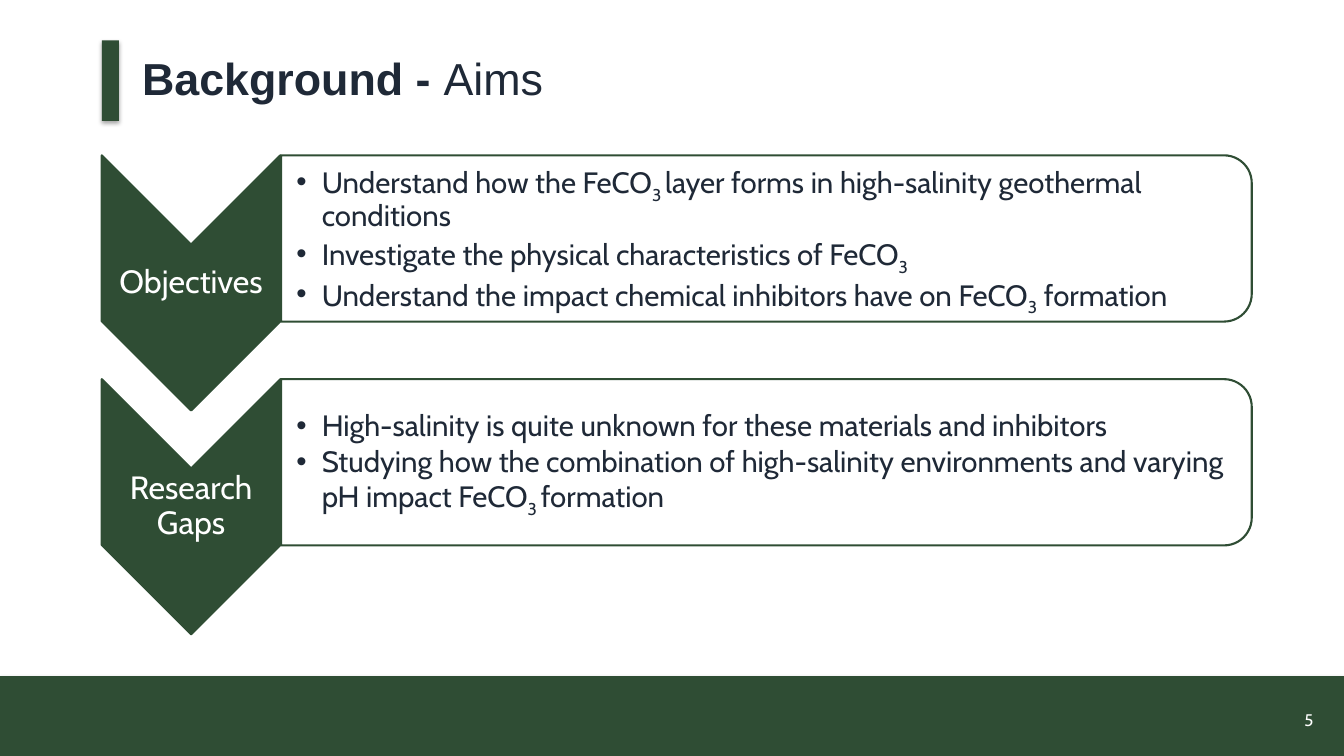
import pptx
import pptx.util
import pptx.dml.color
import pptx.enum.shapes
import pptx.enum.text
import pptx.oxml
import pptx.oxml.ns

Cm, Pt = pptx.util.Cm, pptx.util.Pt
RGB = pptx.dml.color.RGBColor.from_string
SHAPE = pptx.enum.shapes.MSO_SHAPE
ALIGN = pptx.enum.text.PP_ALIGN
NS = pptx.oxml.ns.nsdecls("a")
COLORS = {"green": "2F4D34", "ink": "1F2937", "white": "FFFFFF"}
SUB = {"baseline": "-25000"}


def write(sp, paragraphs, size, color, font="Cabin", align=ALIGN.LEFT,
          inset=(0.25, 0.13, 0.25, 0.13), spacing=None, after=0, bullet=False):
    """Each paragraph is a list of runs: a string, or (string, run attributes)."""
    tf = sp.text_frame
    tf.word_wrap = True
    tf.auto_size = pptx.enum.text.MSO_AUTO_SIZE.NONE
    tf.vertical_anchor = pptx.enum.text.MSO_ANCHOR.MIDDLE
    tf.margin_left, tf.margin_top, tf.margin_right, tf.margin_bottom = map(Cm, inset)
    for i, runs in enumerate(paragraphs):
        p = tf.add_paragraph() if i else tf.paragraphs[0]
        if bullet:
            pPr = p._p.get_or_add_pPr()
            pPr.set("marL", str(Cm(0.64)))
            pPr.set("indent", str(-Cm(0.64)))
            pPr.append(pptx.oxml.parse_xml(f'<a:buFont {NS} typeface="Arial"/>'))
            pPr.append(pptx.oxml.parse_xml(f'<a:buChar {NS} char="•"/>'))
        p.alignment = align
        p.space_after = Pt(after)
        if spacing:
            p.line_spacing = spacing
        for run in runs:
            text, attrs = (run, {}) if isinstance(run, str) else run
            r = p.add_run()
            r.text = text
            r.font.name, r.font.size = font, Pt(size)
            r.font.color.rgb = RGB(COLORS[color])
            for name, value in attrs.items():
                r._r.get_or_add_rPr().set(name, value)


def add_shape(kind, left, top, width, height, fill="green", line=None, rotation=0):
    sp = s.shapes.add_shape(kind, Cm(left), Cm(top), Cm(width), Cm(height))
    sp.shadow.inherit = False
    sp.rotation = rotation
    sp.fill.solid()
    sp.fill.fore_color.rgb = RGB(COLORS[fill])
    if line:
        sp.line.color.rgb = RGB(COLORS[line])
        sp.line.width = Pt(1.5)
    else:
        sp.line.fill.background()
    return sp


prs = pptx.Presentation()
prs.slide_width, prs.slide_height = Cm(33.87), Cm(19.05)
s = prs.slides.add_slide(prs.slide_layouts[5])

# Footer band and title accent, both with a soft shadow
for box in [(0, 17.04, 33.87, 2.03), (2.57, 1.02, 0.43, 2.03)]:
    sp = add_shape(SHAPE.RECTANGLE, *box)
    sp._element.spPr.find(pptx.oxml.ns.qn("a:effectLst")).append(pptx.oxml.parse_xml(
        f'<a:outerShdw {NS} blurRad="{Pt(3.1)}" dist="{Pt(1.8)}" dir="5400000" rotWithShape="0">'
        '<a:srgbClr val="000000"><a:alpha val="35000"/></a:srgbClr></a:outerShdw>'))

# Title
title = s.shapes.title
title.left, title.top, title.width, title.height = Cm(3.33), Cm(1.02), Cm(28.78), Cm(2.03)
write(title, [[("Background - ", {"b": "1"}), ("Aims", {"b": "0"})]], 32, "ink",
      font="Arial", spacing=0.9)

# Slide number
number = s.shapes.add_textbox(Cm(25.73), Cm(17.63), Cm(7.62), Cm(1.02))
write(number, [["5"]], 12, "white", align=ALIGN.RIGHT)

# Chevron rows: label and bullet list
rows = [
    ("Objectives", [
        ["Understand how the FeCO", ("3 ", SUB),
         "layer forms in high-salinity geothermal conditions"],
        ["Investigate the physical characteristics of FeCO", ("3", SUB)],
        ["Understand the impact chemical inhibitors have on FeCO", ("3", SUB), " formation"],
    ]),
    ("Research Gaps", [
        ["High-salinity is quite unknown for these materials and inhibitors"],
        ["Studying how the combination of high-salinity environments and varying "
         "pH impact FeCO", ("3 ", SUB), "formation"],
    ]),
]
for i, (label, points) in enumerate(rows):
    top = 3.91 + i * 5.64
    add_shape(SHAPE.CHEVRON, 1.6, top + 0.97, 6.43, 4.5, line="green", rotation=90)
    sp = s.shapes.add_textbox(Cm(2.57), Cm(top + 2.26), Cm(4.5), Cm(1.93))
    write(sp, [[label]], 23, "white", align=ALIGN.CENTER, inset=(0.05,) * 4, spacing=0.9)

    panel = add_shape(SHAPE.ROUND_2_SAME_RECTANGLE, 17.22, top - 10.13, 4.19, 24.46,
                      fill="white", line="green", rotation=90)
    panel._element.spPr.find(".//" + pptx.oxml.ns.qn("a:srgbClr")).append(
        pptx.oxml.parse_xml(f'<a:alpha {NS} val="90000"/>'))
    sp = s.shapes.add_textbox(Cm(7.06), Cm(top + 0.23), Cm(24.26), Cm(3.78))
    write(sp, points, 21, "ink", inset=(0.41, 0.03, 0.03, 0.03), spacing=0.9,
          after=3, bullet=True)

prs.save("out.pptx")
